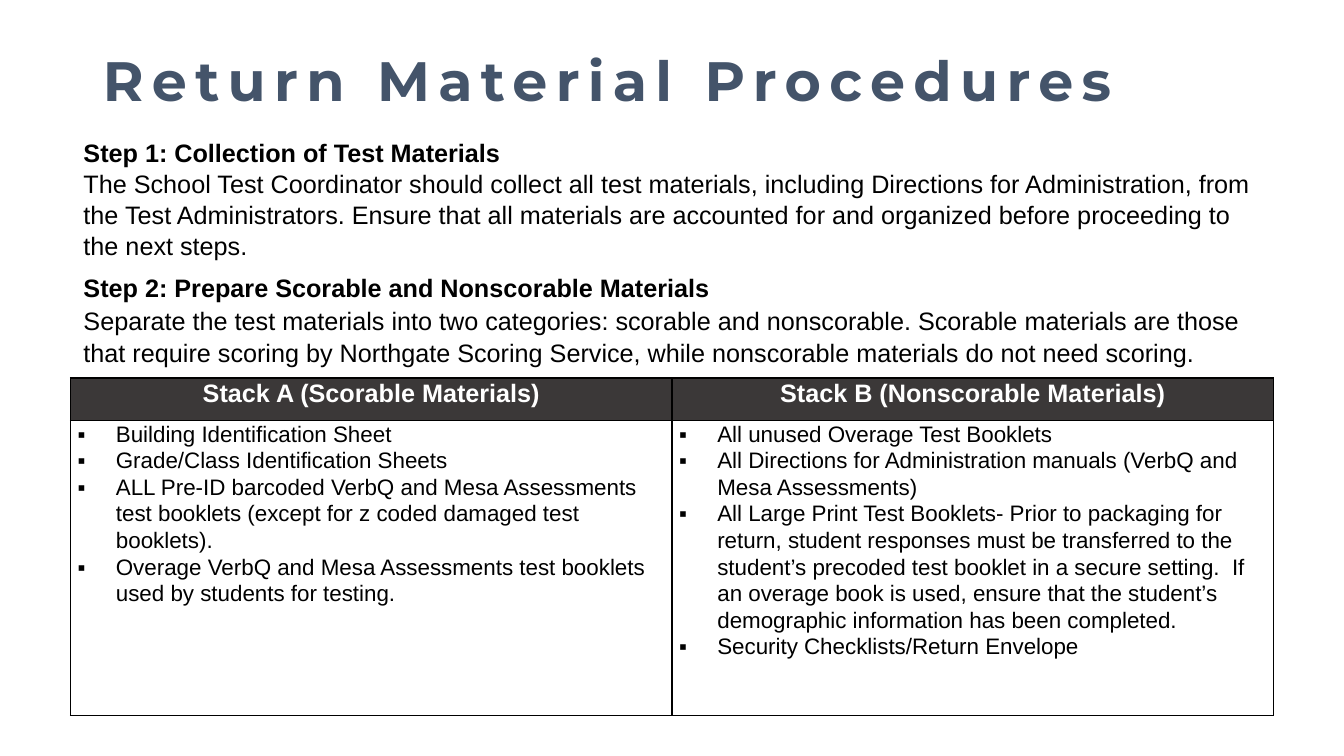
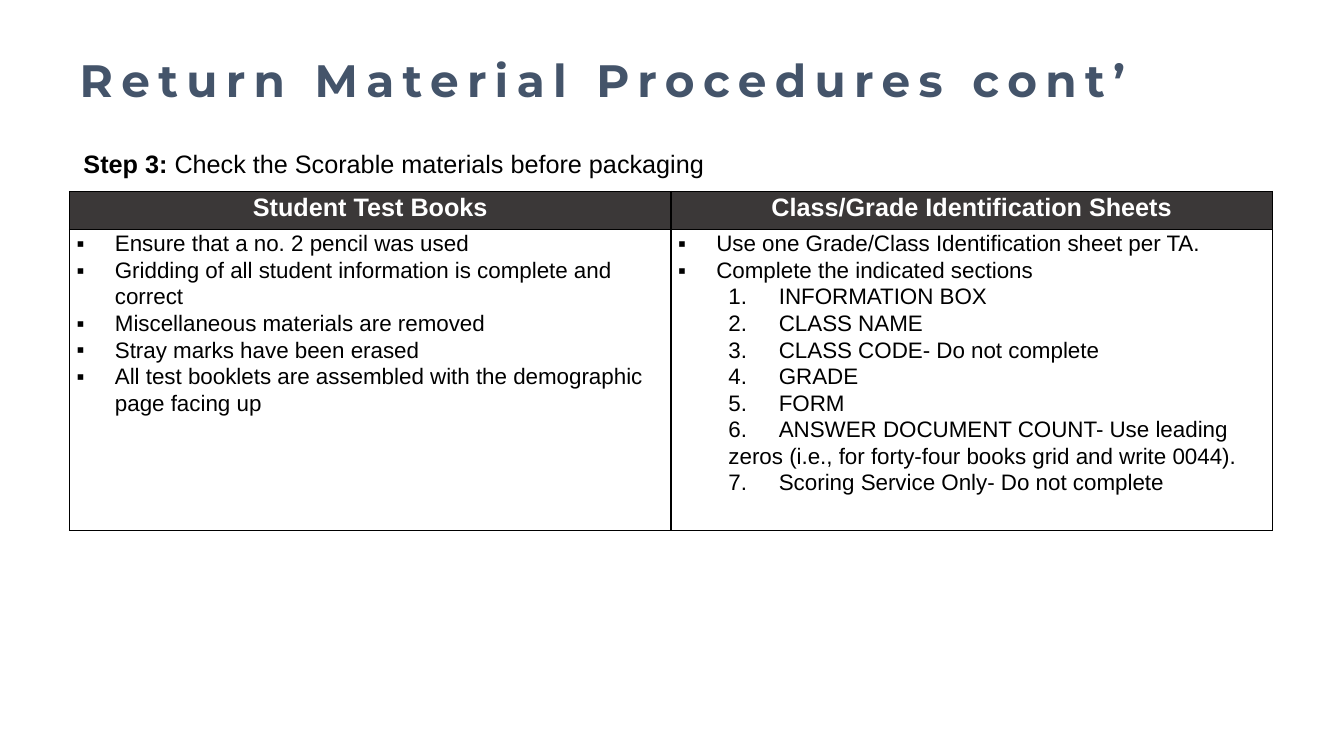
from lxml import etree
from pptx import Presentation
from pptx.dml.color import RGBColor
from pptx.enum.text import MSO_ANCHOR, MSO_AUTO_SIZE, PP_ALIGN
from pptx.oxml.ns import qn
from pptx.util import Pt

PX = 9144
SLATE = RGBColor(0x44, 0x54, 0x6A)
CHARCOAL = RGBColor(0x3B, 0x38, 0x38)
BLACK = RGBColor(0, 0, 0)
WHITE = RGBColor(255, 255, 255)
LEFT, CENTER = PP_ALIGN.LEFT, PP_ALIGN.CENTER
MIDDLE = MSO_ANCHOR.MIDDLE
NO_FIT = MSO_AUTO_SIZE.NONE
BODY_FONT, TITLE_FONT = "Arial", "Montserrat"
TABLE_W, CELL_INSET = 1193, 7

SLIDES = [
    {
        "title": ("Return Material Procedures", 39.6, 92, 1150),
        "body": (131, 238, [
            ([("Step 1: Collection of Test Materials", True)], 1.02, 0),
            ([("The School Test Coordinator should collect all test materials, including Directions for Administration, from the Test Administrators. Ensure that all materials are accounted for and organized before proceeding to the next steps.", False)], 1.02, 7.2),
            ([("Step 2: Prepare Scorable and Nonscorable Materials", True)], 1.07, 0),
            ([("Separate the test materials into two categories: scorable and nonscorable. Scorable materials are those that require scoring by Northgate Scoring Service, while nonscorable materials do not need scoring.", False)], 1.07, 8),
        ]),
        "table": (70, 375, [42, 293]),
        "columns": [
            ("Stack A (Scorable Materials)", [
                "Building Identification Sheet",
                "Grade/Class Identification Sheets",
                "ALL Pre-ID barcoded VerbQ and Mesa Assessments test booklets (except for z coded damaged test booklets).",
                "Overage VerbQ and Mesa Assessments test booklets used by students for testing.",
            ], []),
            ("Stack B (Nonscorable Materials)", [
                "All unused Overage Test Booklets",
                "All Directions for Administration manuals (VerbQ and Mesa Assessments)",
                "All Large Print Test Booklets- Prior to packaging for return, student responses must be transferred to the student’s precoded test booklet in a secure setting.  If an overage book is used, ensure that the student’s demographic information has been completed.",
                "Security Checklists/Return Envelope",
            ], []),
        ],
    },
    {
        "title": ("Return Material Procedures cont’", 32.4, 69, 1193),
        "body": (142, 40, [
            ([("Step 3: ", True), ("Check the Scorable materials before packaging", False)], 1.02, 0),
        ]),
        "table": (69, 190, [38, 298]),
        "columns": [
            ("Student Test Books", [
                "Ensure that a no. 2 pencil was used",
                "Gridding of all student information is complete and correct",
                "Miscellaneous materials are removed",
                "Stray marks have been erased",
                "All test booklets are assembled with the demographic page facing up",
            ], []),
            ("Class/Grade Identification Sheets", [
                "Use one Grade/Class Identification sheet per TA.",
                "Complete the indicated sections",
            ], [
                "INFORMATION BOX",
                "CLASS NAME",
                "CLASS CODE- Do not complete",
                "GRADE",
                "FORM",
                "ANSWER DOCUMENT COUNT- Use leading zeros (i.e., for forty-four books grid and write 0044).",
                "Scoring Service Only- Do not complete",
            ]),
        ],
    },
]


def add_paragraph(tf, first, runs, size, color, spacing, margin=0, bullet=False):
    p = tf.paragraphs[0] if first else tf.add_paragraph()
    p.line_spacing = spacing
    pPr = p._p.get_or_add_pPr()
    pPr.set("marL", str(margin * PX))
    pPr.set("indent", str(-margin * PX if bullet else 0))
    if bullet:
        etree.SubElement(pPr, qn("a:buFont"), typeface=BODY_FONT)
        etree.SubElement(pPr, qn("a:buChar"), char="▪")
    for text, bold in runs:
        r = p.add_run()
        r.text = text
        r.font.name = BODY_FONT
        r.font.size = Pt(size)
        r.font.bold = bold
        r.font.color.rgb = color
    return p


def format_cell(cell):
    cell.margin_left = cell.margin_right = CELL_INSET * PX
    cell.margin_top = cell.margin_bottom = 0
    tcPr = cell._tc.get_or_add_tcPr()
    for side in ("lnL", "lnR", "lnT", "lnB"):
        ln = etree.SubElement(tcPr, qn("a:" + side), w=str(Pt(1)))
        fill = etree.SubElement(ln, qn("a:solidFill"))
        etree.SubElement(fill, qn("a:srgbClr"), val=str(BLACK))


prs = Presentation()
prs.slide_width = 1333 * PX
prs.slide_height = 750 * PX

for content in SLIDES:
    s = prs.slides.add_slide(prs.slide_layouts[5])

    text, size, left, width = content["title"]
    title = s.shapes.title
    title.left, title.top = left * PX, 40 * PX
    title.width, title.height = width * PX, 85 * PX
    tf = title.text_frame
    tf.text = text
    tf.auto_size = NO_FIT
    tf.vertical_anchor = MIDDLE
    p = tf.paragraphs[0]
    p.alignment = LEFT
    p.line_spacing = 0.9
    r = p.runs[0]
    r.font.name = TITLE_FONT
    r.font.size = Pt(size)
    r.font.bold = True
    r.font.color.rgb = SLATE
    r.font._element.set("spc", "600")

    top, height, steps = content["body"]
    tf = s.shapes.add_textbox(67 * PX, top * PX, 1196 * PX, height * PX).text_frame
    tf.word_wrap = True
    for i, (runs, spacing, after) in enumerate(steps):
        p = add_paragraph(tf, i == 0, runs, 18, BLACK, spacing, 6)
        p.space_after = Pt(after)

    left, top, row_heights = content["table"]
    table = s.shapes.add_table(2, 2, left * PX, top * PX, TABLE_W * PX, sum(row_heights) * PX).table
    table.first_row = True
    table.horz_banding = False
    for row, height in zip(table.rows, row_heights):
        row.height = height * PX
    for col, (heading, bullets, numbered) in enumerate(content["columns"]):
        head, body = table.cell(0, col), table.cell(1, col)
        format_cell(head)
        head.fill.solid()
        head.fill.fore_color.rgb = CHARCOAL
        p = add_paragraph(head.text_frame, True, [(heading, True)], 18, WHITE, 1.07)
        p.alignment = CENTER
        format_cell(body)
        body.fill.background()
        for i, text in enumerate(bullets):
            add_paragraph(body.text_frame, i == 0, [(text, False)], 16, BLACK, 1.07, 38, True)
        for number, text in enumerate(numbered, 1):
            p = add_paragraph(body.text_frame, False, [(f"{number}.\t{text}", False)], 16, BLACK, 1.07, 50)
            p.level = 1

prs.save("out.pptx")
